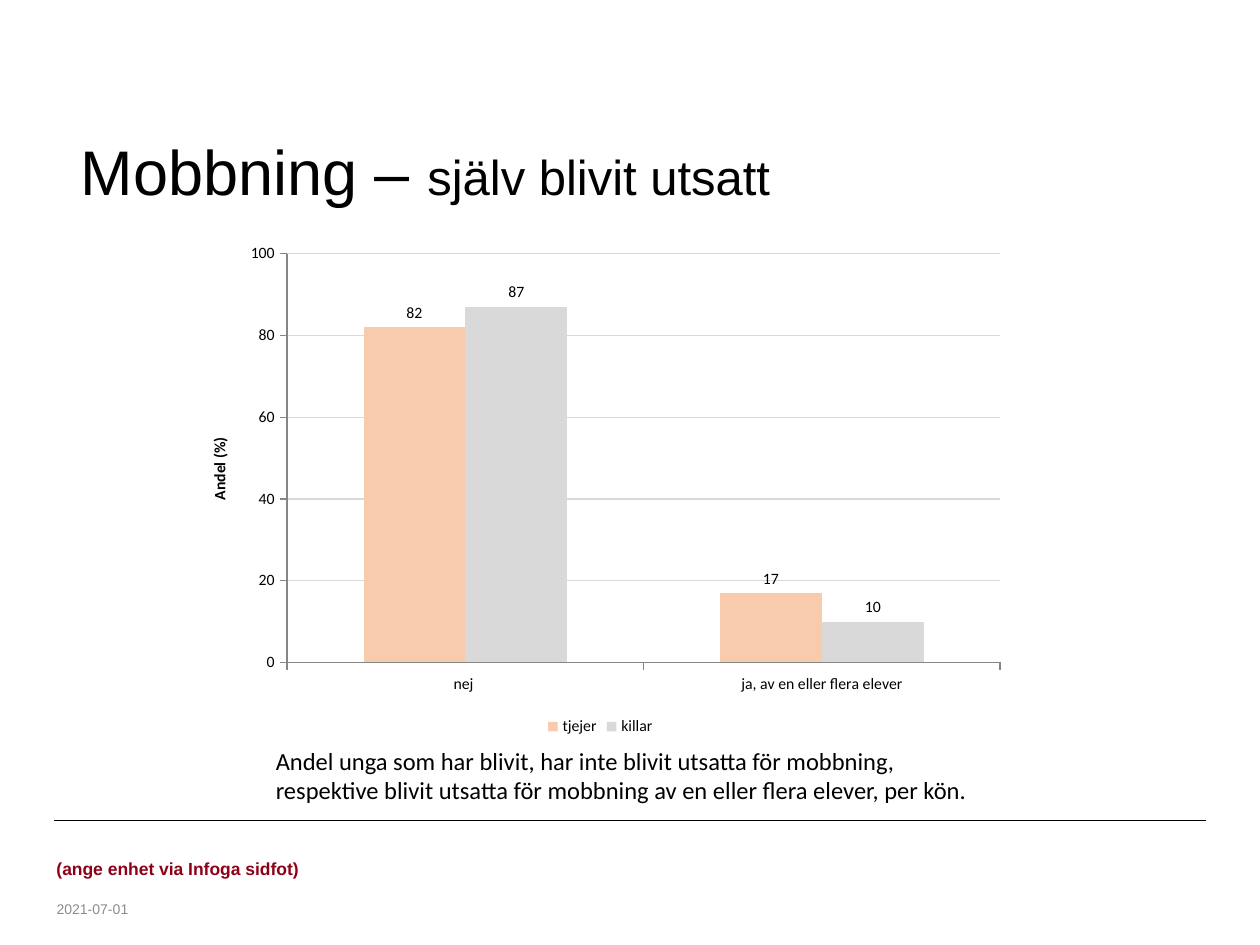
from dataclasses import dataclass

import pptx
import pptx.chart.data
import pptx.dml.color
import pptx.enum.chart
import pptx.enum.shapes
import pptx.enum.text
import pptx.oxml
import pptx.oxml.ns
import pptx.util
from pptx.util import Inches


@dataclass(frozen=True)
class Theme:
    heading_font: str = "Arial"
    body_font: str = "Calibri"
    black: str = "000000"
    date_grey: str = "8C8C8C"
    axis_grey: str = "868686"
    grid_grey: str = "D9D9D9"
    unit_red: str = "8D0017"
    girls: str = "F8CBAD"
    boys: str = "D9D9D9"
    title_size: int = 36
    subtitle_size: int = 28
    caption_size: int = 14
    unit_size: int = 10
    chart_size: int = 9
    date_size: int = 8


def rgb(color):
    return pptx.dml.color.RGBColor.from_string(color)


class SlideBuilder:
    def __init__(self, slide, theme):
        self.slide = slide
        self.theme = theme

    def style_font(self, font, size, name, color=None, bold=False):
        font.size = pptx.util.Pt(size)
        font.name = name
        font.bold = bold
        font.color.rgb = rgb(color or self.theme.black)

    def add_run(self, paragraph, text, size, name, color=None, bold=False):
        run = paragraph.add_run()
        run.text = text
        self.style_font(run.font, size, name, color, bold)

    def add_title(self, runs, left, top, width, height):
        title = self.slide.shapes.title
        title.left, title.top, title.width, title.height = left, top, width, height
        title.text_frame.vertical_anchor = pptx.enum.text.MSO_ANCHOR.MIDDLE
        paragraph = title.text_frame.paragraphs[0]
        paragraph.alignment = pptx.enum.text.PP_ALIGN.LEFT
        for text, size in runs:
            self.add_run(paragraph, text, size, self.theme.heading_font)

    def add_text(self, lines, left, top, width, height, size, name,
                 color=None, bold=False, wrap=True,
                 anchor=pptx.enum.text.MSO_ANCHOR.TOP):
        frame = self.slide.shapes.add_textbox(left, top, width, height).text_frame
        frame.word_wrap = wrap
        frame.vertical_anchor = anchor
        for index, line in enumerate(lines):
            paragraph = frame.add_paragraph() if index else frame.paragraphs[0]
            self.add_run(paragraph, line, size, name, color, bold)

    def add_rule(self, left, right, y):
        line = self.slide.shapes.add_connector(
            pptx.enum.shapes.MSO_CONNECTOR.STRAIGHT, left, y, right, y)
        line.line.color.rgb = rgb(self.theme.black)
        line.line.width = pptx.util.Pt(0.5)
        line._element.spPr.append(pptx.oxml.parse_xml(
            f"<a:effectLst {pptx.oxml.ns.nsdecls('a')}/>"))

    def add_column_chart(self, categories, series, axis_title, left, top, width, height):
        theme = self.theme
        data = pptx.chart.data.CategoryChartData()
        data.categories = categories
        for name, values, _ in series:
            data.add_series(name, values)
        chart = self.slide.shapes.add_chart(
            pptx.enum.chart.XL_CHART_TYPE.COLUMN_CLUSTERED,
            left, top, width, height, data).chart
        self.style_font(chart.font, theme.chart_size, theme.body_font)
        chart.has_title = False
        chart.has_legend = True
        chart.legend.position = pptx.enum.chart.XL_LEGEND_POSITION.BOTTOM
        chart.legend.include_in_layout = False

        plot = chart.plots[0]
        plot.gap_width = 150
        plot.overlap = 0
        plot.vary_by_categories = False
        for column, (_, _, color) in zip(plot.series, series):
            column.format.fill.solid()
            column.format.fill.fore_color.rgb = rgb(color)
            labels = column.data_labels
            labels.show_value = True
            labels.position = pptx.enum.chart.XL_LABEL_POSITION.OUTSIDE_END
            self.style_font(labels.font, theme.chart_size, theme.body_font)

        for axis in (chart.category_axis, chart.value_axis):
            axis.major_tick_mark = pptx.enum.chart.XL_TICK_MARK.OUTSIDE
            axis.minor_tick_mark = pptx.enum.chart.XL_TICK_MARK.NONE
            axis.format.line.color.rgb = rgb(theme.axis_grey)
            axis.format.line.width = pptx.util.Pt(0.75)

        value_axis = chart.value_axis
        value_axis.minimum_scale = 0
        value_axis.maximum_scale = 100
        value_axis.major_unit = 20
        value_axis.has_major_gridlines = True
        grid_line = value_axis.major_gridlines.format.line
        grid_line.color.rgb = rgb(theme.grid_grey)
        grid_line.width = pptx.util.Pt(0.75)
        paragraph = value_axis.axis_title.text_frame.paragraphs[0]
        self.add_run(paragraph, axis_title, theme.chart_size, theme.body_font, bold=True)


def main():
    theme = Theme()
    presentation = pptx.Presentation()
    presentation.slide_width = Inches(10)
    presentation.slide_height = Inches(7.5)
    slide = presentation.slides.add_slide(presentation.slide_layouts[5])
    builder = SlideBuilder(slide, theme)
    middle = pptx.enum.text.MSO_ANCHOR.MIDDLE

    builder.add_rule(Inches(0.43), Inches(9.57), Inches(6.51))
    builder.add_title(
        [("Mobbning – ", theme.title_size), ("själv blivit utsatt", theme.subtitle_size)],
        Inches(0.54), Inches(1), Inches(7.95), Inches(0.71))
    builder.add_text(
        ["2021-07-01"], Inches(0.35), Inches(7.09), Inches(0.79), Inches(0.24),
        theme.date_size, theme.heading_font, theme.date_grey, anchor=middle)
    builder.add_text(
        ["(ange enhet via Infoga sidfot)"],
        Inches(0.35), Inches(6.77), Inches(5.67), Inches(0.24),
        theme.unit_size, theme.heading_font, theme.unit_red, bold=True, anchor=middle)
    builder.add_column_chart(
        ["nej ", "ja, av en eller flera elever"],
        [("tjejer", (82, 17), theme.girls), ("killar", (87, 10), theme.boys)],
        "Andel (%)", Inches(1.46), Inches(1.86), Inches(6.61), Inches(4.02))
    builder.add_text(
        ["Andel unga som har blivit, har inte blivit utsatta för mobbning,",
         "respektive blivit utsatta för mobbning av en eller flera elever, per kön."],
        Inches(2.09), Inches(5.87), Inches(5.79), Inches(0.88),
        theme.caption_size, theme.body_font, wrap=False)
    presentation.save("out.pptx")


if __name__ == "__main__":
    main()
